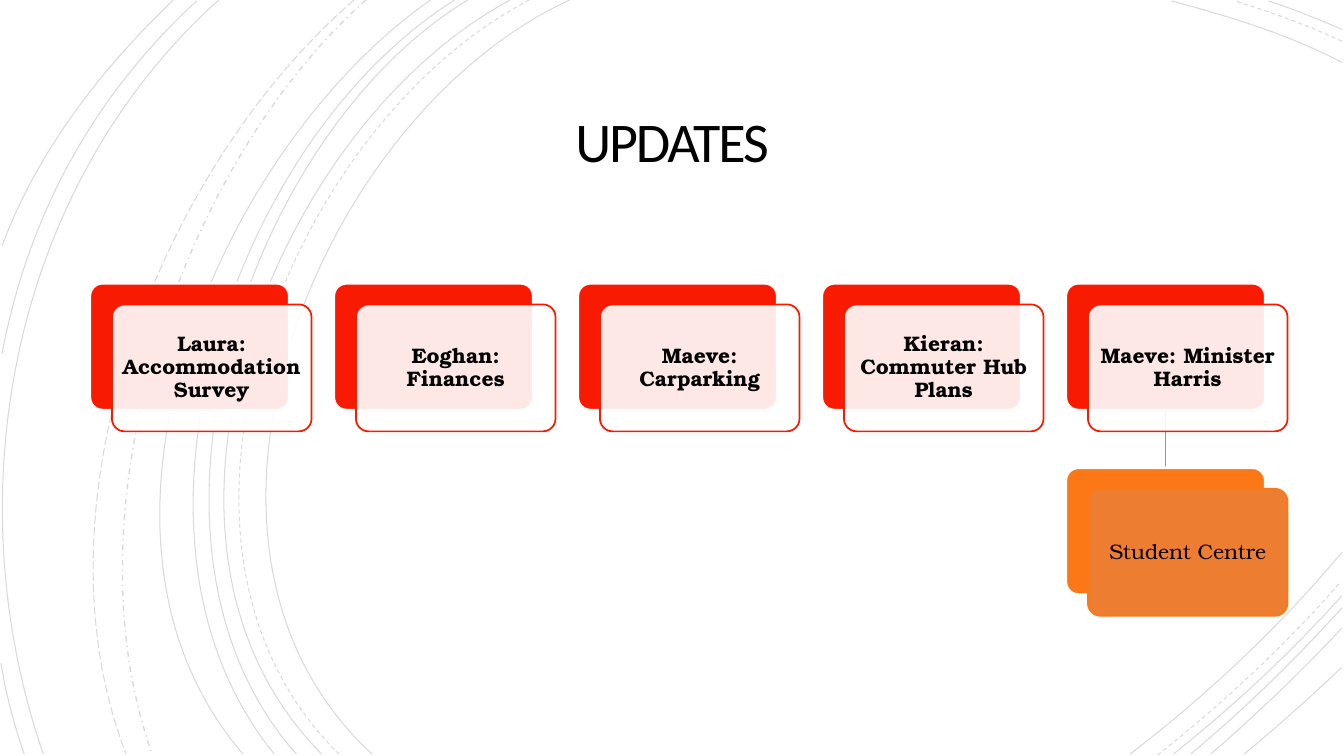
from lxml.etree import SubElement
from pptx import Presentation
from pptx.dml.color import RGBColor
from pptx.enum.dml import MSO_LINE as DASH
from pptx.enum.shapes import MSO_CONNECTOR as CONNECTOR, MSO_SHAPE as SHAPE
from pptx.enum.text import MSO_ANCHOR as ANCHOR, PP_ALIGN as ALIGN
from pptx.oxml.ns import qn
from pptx.util import Inches, Pt

HEADING = "UPDATES"
UPDATES = [
    "Laura: Accommodation Survey",
    "Eoghan: Finances",
    "Maeve: Carparking",
    "Kieran: Commuter Hub Plans",
    "Maeve: Minister Harris",
]
FOLLOW_UP = "Student Centre"

RED, ORANGE, SOFT_ORANGE = "F81B02", "FC7715", "ED7D31"
BLACK, WHITE = "000000", "FFFFFF"

ARCS = {
    DASH.SOLID: [
        [(5.65, 0), (3.15, 1.15), (1.43, 5.4), (3.69, 7.48)],
        [(13.31, 0.62), (12.78, 0.34), (12.18, 0.16), (11.62, 0.01)],
        [(11.21, 7.48), (11.97, 6.9), (12.69, 6.22), (13.31, 5.48)],
        [(5.06, 0), (2.7, 1.27), (1.1, 5.37), (3.19, 7.48)],
        [(13.31, 0.29), (13.07, 0.19), (12.83, 0.09), (12.58, 0.01)],
        [(11.64, 7.48), (12.23, 7.01), (12.8, 6.48), (13.31, 5.91)],
        [(4.64, 0), (2.44, 1.33), (1.1, 5.41), (2.94, 7.48)],
        [(11.81, 7.48), (12.34, 7.04), (12.84, 6.55), (13.31, 6.03)],
        [(4.51, 0), (2.31, 1.38), (0.97, 5.33), (2.72, 7.48)],
        [(12.01, 7.48), (12.46, 7.09), (12.9, 6.67), (13.31, 6.23)],
        [(4.27, 0), (2.17, 1.47), (0.53, 5.29), (2.41, 7.48)],
        [(12.34, 7.48), (12.67, 7.21), (12.99, 6.92), (13.31, 6.62)],
        [(2.17, 0), (0.11, 1.85), (-0.46, 4.9), (0.43, 7.48)],
        [(1.95, 0.01), (0.92, 0.96), (0.28, 2.14), (0.02, 3.51)],
        [(0.01, 6.58), (0.06, 6.89), (0.14, 7.19), (0.24, 7.48)],
        [(1.72, 0), (1, 0.69), (0.37, 1.5), (0.02, 2.44)],
    ],
    DASH.DASH: [
        [(5.25, 0), (2.85, 1.25), (1.23, 5.37), (3.36, 7.48)],
        [(13.31, 0.41), (12.97, 0.25), (12.6, 0.12), (12.25, 0.01)],
        [(11.48, 7.49), (12.13, 6.98), (12.75, 6.4), (13.3, 5.77)],
    ],
    DASH.DASH_DOT: [[(3.63, 0), (1.76, 1.66), (0.65, 5.09), (1.51, 7.48)]],
    DASH.LONG_DASH: [[(3.51, 0), (1.57, 1.69), (0.29, 4.99), (1.25, 7.48)]],
}

CARD_W, CARD_H = 1.98, 1.26
CARD_LEFT, CARD_TOP = 0.89, 2.81
COLUMN_STEP, ROW_STEP = 2.42, 1.83
PANEL_DX, PANEL_DY = 0.22, 0.21


def paint(target, color, opacity=100):
    target.fore_color.rgb = RGBColor.from_string(color)
    if opacity < 100:
        tint = target._xPr.find(".//" + qn("a:srgbClr"))
        SubElement(tint, qn("a:alpha"), val=str(opacity * 1000))


def outline(shape, color, width, opacity=100):
    shape.line.width = Pt(width)
    shape.line.fill.solid()
    paint(shape.line.fill, color, opacity)


def write(shape, text, font, size, inset, spacing, bold=False):
    frame = shape.text_frame
    frame.text = text
    frame.word_wrap = True
    frame.vertical_anchor = ANCHOR.MIDDLE
    frame.margin_left = frame.margin_right = Inches(inset)
    frame.margin_top = frame.margin_bottom = Inches(inset)
    paragraph = frame.paragraphs[0]
    paragraph.alignment = ALIGN.CENTER
    paragraph.line_spacing = spacing
    run = paragraph.runs[0]
    run.font.name, run.font.size, run.font.bold = font, Pt(size), bold
    run.font.color.rgb = RGBColor.from_string(BLACK)
    return run


def draw_arc(shapes, points, dash):
    start, *rest = [(Inches(x), Inches(y)) for x, y in points]
    builder = shapes.build_freeform(*start)
    builder.add_line_segments(rest, close=False)
    arc = builder.convert_to_shape()
    outlined = arc._element.find(".//" + qn("a:path"))
    curve = SubElement(outlined, qn("a:cubicBezTo"))
    for segment in outlined.findall(qn("a:lnTo")):
        curve.append(segment[0])
        outlined.remove(segment)
    arc.shadow.inherit = False
    arc.fill.background()
    outline(arc, BLACK, 1 if dash == DASH.DASH_DOT else 0.75, 15)
    arc.line.dash_style = dash


def rounded(shapes, left, top, fill, opacity, edge, width):
    box = shapes.add_shape(SHAPE.ROUNDED_RECTANGLE, Inches(left), Inches(top),
                           Inches(CARD_W), Inches(CARD_H))
    box.adjustments[0] = 0.1
    box.shadow.inherit = False
    box.fill.solid()
    paint(box.fill, fill, opacity)
    outline(box, edge, width)
    return box


def draw_card(shapes, text, column, row, color, panel_fill, opacity, bold):
    left = CARD_LEFT + column * COLUMN_STEP
    top = CARD_TOP + row * ROW_STEP
    rounded(shapes, left, top, color, 100, WHITE, 2)
    panel = rounded(shapes, left + PANEL_DX, top + PANEL_DY,
                    panel_fill, opacity, color, 1.25)
    write(panel, text, "TeX Gyre Bonum", 15, 0.06, 0.9, bold)


def main():
    deck = Presentation()
    deck.slide_width, deck.slide_height = Inches(13.33), Inches(7.5)
    slide = deck.slides.add_slide(deck.slide_layouts[6])
    slide.background.fill.solid()
    paint(slide.background.fill, WHITE)
    shapes = slide.shapes

    for dash, arcs in ARCS.items():
        for points in arcs:
            draw_arc(shapes, points, dash)

    heading = shapes.add_textbox(Inches(1.92), Inches(0.87), Inches(9.49), Inches(1.15))
    run = write(heading, HEADING, "Calibri", 40, 0.25, 0.85)
    run.font._element.set("spc", "-150")

    last = len(UPDATES) - 1
    stem_x = Inches(CARD_LEFT + last * COLUMN_STEP + CARD_W / 2)
    stem = shapes.add_connector(CONNECTOR.STRAIGHT, stem_x, Inches(CARD_TOP + CARD_H),
                                stem_x, Inches(CARD_TOP + ROW_STEP))
    outline(stem, ORANGE, 1.25)
    SubElement(stem._element.spPr, qn("a:effectLst"))

    for column, update in enumerate(UPDATES):
        draw_card(shapes, update, column, 0, RED, WHITE, 90, True)
    draw_card(shapes, FOLLOW_UP, last, 1, ORANGE, SOFT_ORANGE, 100, False)

    deck.save("out.pptx")


if __name__ == "__main__":
    main()
